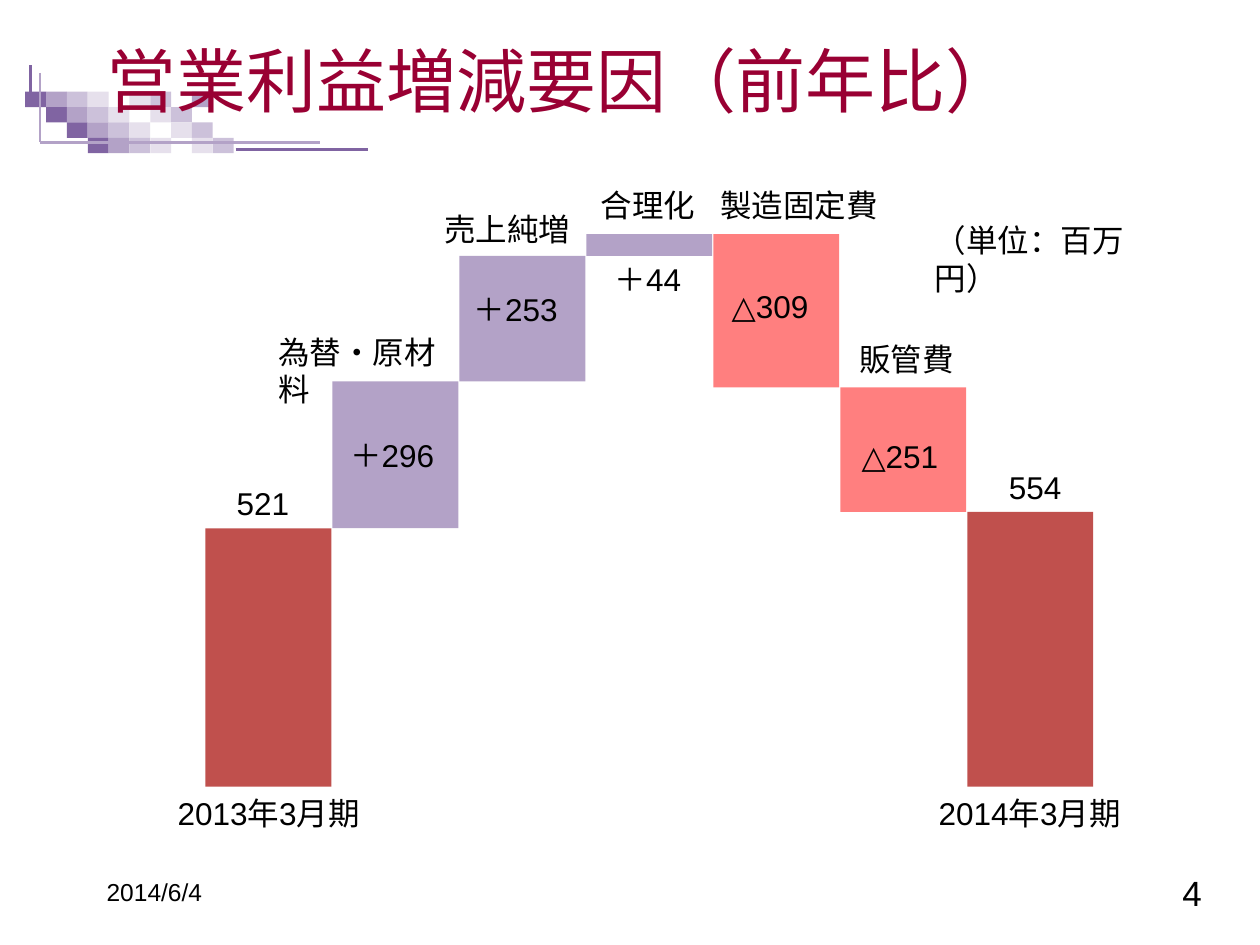
import pptx
import pptx.util
import pptx.dml.color
import pptx.enum.shapes
import pptx.enum.text
import pptx.oxml
import pptx.oxml.ns
from dataclasses import dataclass

Cm = pptx.util.Cm
Pt = pptx.util.Pt
RGB = pptx.dml.color.RGBColor.from_string
Align = pptx.enum.text.PP_ALIGN
Anchor = pptx.enum.text.MSO_ANCHOR
Fit = pptx.enum.text.MSO_AUTO_SIZE


@dataclass(frozen=True)
class Theme:
    tints: tuple = ("8064A2", "B3A2C7", "CCC1DA", "E6E0EC")
    total: str = "C0504D"
    gain: str = "B3A2C7"
    loss: str = "FF0000"
    title: str = "990033"
    ink: str = "000000"
    head: int = 40
    page: int = 20
    body: int = 18
    date: int = 14


theme = Theme()
deck = pptx.Presentation()
deck.slide_width, deck.slide_height = Cm(25.4), Cm(19.05)
slide = deck.slides.add_slide(deck.slide_layouts[6])
shapes = slide.shapes


def block(left, top, width, height, color):
    rect = shapes.add_shape(pptx.enum.shapes.MSO_SHAPE.RECTANGLE,
                            Cm(left), Cm(top), Cm(width), Cm(height))
    rect.shadow.inherit = False
    rect.fill.solid()
    rect.fill.fore_color.rgb = RGB(color)
    rect.line.fill.background()
    return rect


def label(words, left, top, width, height=1.02, size=theme.body, color=theme.ink,
          face="Arial", align=Align.LEFT, anchor=Anchor.TOP, fit=Fit.NONE):
    frame = shapes.add_textbox(Cm(left), Cm(top), Cm(width), Cm(height)).text_frame
    para = frame.paragraphs[0]
    para.text, para.alignment = words, align
    for name, value in {"word_wrap": True, "vertical_anchor": anchor,
                        "auto_size": fit}.items():
        setattr(frame, name, value)
    font = para.runs[0].font
    for name, value in {"name": face, "size": Pt(size)}.items():
        setattr(font, name, value)
    font.color.rgb = RGB(color)


cell = 0.42
rise = 0.31
for row, tints in enumerate(["0123 32 1"] + ["0123 32"] * 3):
    for col, tint in enumerate(tints, row):
        if tint != " ":
            block(0.51 + cell * col, 1.85 + rise * row, cell, rise,
                  theme.tints[int(tint)])

for x1, y1, x2, y2, tint in [(0.81, 1.47, 0.81, 2.87, 1), (0.81, 2.87, 6.45, 2.87, 1),
                             (4.75, 3.02, 7.42, 3.02, 0), (0.61, 1.85, 0.61, 1.32, 0)]:
    line = shapes.add_connector(pptx.enum.shapes.MSO_CONNECTOR.STRAIGHT,
                                Cm(x1), Cm(y1), Cm(x2), Cm(y2))
    line.line.color.rgb = RGB(theme.tints[tint])
    line.line.width = Pt(1.5)
    line._element.spPr.append(pptx.oxml.parse_xml(
        "<a:effectLst %s/>" % pptx.oxml.ns.nsdecls("a")))

label("営業利益増減要因（前年比）", 1.9, 0.43, 22.66, 2.34, theme.head, theme.title,
      "Noto Sans CJK JP", anchor=Anchor.MIDDLE)
label("2014/6/4", 1.9, 17.35, 5.28, 1.27, theme.date, anchor=Anchor.MIDDLE)
label("4", 19.2, 17.35, 5.28, 1.27, theme.page, align=Align.RIGHT, anchor=Anchor.MIDDLE)

floor = 15.86
scale = 0.01
level = 0
bars = [(521, theme.total), (296, theme.gain), (253, theme.gain), (44, theme.gain),
        (-309, theme.loss), (-251, theme.loss), (554, theme.total)]
for step, (value, color) in enumerate(bars):
    start = 0 if color == theme.total else level
    level = start + value
    bar = block(4.14 + 2.56 * step, floor - scale * max(start, level),
                2.54, scale * abs(value), color)
    if color == theme.loss:
        tone = bar.fill._xPr.find(".//" + pptx.oxml.ns.qn("a:srgbClr"))
        tone.append(pptx.oxml.parse_xml(
            '<a:alpha %s val="50000"/>' % pptx.oxml.ns.nsdecls("a")))

for words, left, top, width in [
    ("2013年3月期", 3.33, 15.88, 4.22),
    ("2014年3月期", 18.67, 15.88, 4.22),
    ("521", 4.52, 9.63, 1.57),
    ("554", 20.09, 9.32, 1.57),
    ("＋296", 6.81, 8.66, 2.24),
    ("為替・原材料", 5.36, 6.58, 4.04),
    ("売上純増", 8.71, 4.11, 3.07),
    ("＋253", 9.3, 5.72, 2.24),
    ("合理化", 11.86, 3.63, 2.44),
    ("＋44", 12.14, 5.11, 1.85),
    ("製造固定費", 14.27, 3.63, 3.71),
    ("△309", 14.5, 5.66, 2.24),
    ("△251", 17.12, 8.69, 2.24),
    ("販管費", 17.07, 6.73, 2.44),
]:
    label(words, left, top, width, fit=Fit.SHAPE_TO_FIT_TEXT)
label("（単位：百万円）", 18.59, 4.34, 4.67, face="Times New Roman",
      fit=Fit.SHAPE_TO_FIT_TEXT)

deck.save("out.pptx")
